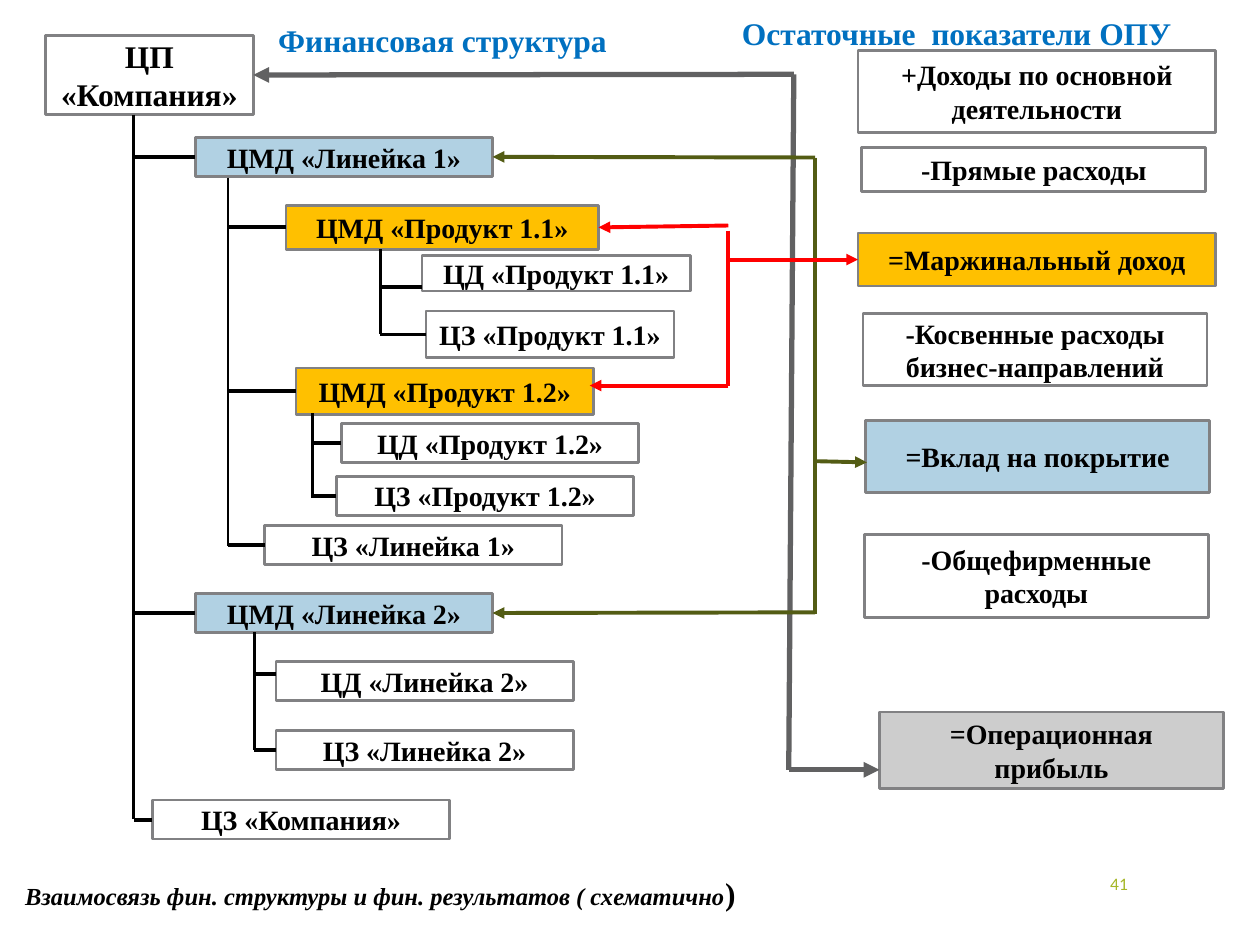
from dataclasses import dataclass

from lxml import etree
from pptx import Presentation
from pptx.dml.color import RGBColor
from pptx.enum import shapes, text
from pptx.oxml import ns
from pptx.util import Inches, Pt


@dataclass(frozen=True)
class Theme:
    serif: str = "Times New Roman"
    sans: str = "Calibri"
    black: str = "000000"
    white: str = "FFFFFF"
    edge: str = "818183"
    blue: str = "B1D1E3"
    gold: str = "FFC000"
    gray: str = "CDCDCD"
    title: str = "0070C0"
    page: str = "A6B727"
    red: str = "FF0000"
    olive: str = "535C14"
    dark: str = "616162"
    head: int = 18
    body: int = 16
    note: int = 14
    small: int = 10
    thin: float = 1.5
    mid: float = 2.25
    thick: float = 3


T = Theme()
deck = Presentation()
deck.slide_width, deck.slide_height = Inches(10), Inches(7.5)
slide = deck.slides.add_slide(deck.slide_layouts[6])


def style(font, size, color=T.black, bold=True, name=T.serif):
    font.name, font.size, font.bold = name, Pt(size), bold
    font.color.rgb = RGBColor.from_string(color)


def link(x1, y1, x2, y2, color=T.black, width=T.mid, arrow=False, goal=None, side=1):
    """Draw a straight line; goal is a box whose side the line is joined to."""
    line = slide.shapes.add_connector(
        shapes.MSO_CONNECTOR.STRAIGHT, *map(Inches, (x1, y1, x2, y2)))
    line.line.color.rgb = RGBColor.from_string(color)
    line.line.width = Pt(width)
    props = line._element.spPr
    if arrow:
        etree.SubElement(props.find(ns.qn("a:ln")), ns.qn("a:tailEnd"), type="triangle")
    etree.SubElement(props, ns.qn("a:effectLst"))
    if goal:
        line.end_connect(boxes[goal], side)


# Boxes: the tree of centres on the left, the profit figures on the right
nodes = [
    ("ЦП «Компания»", 0.36, 0.28, 1.65, 0.63, T.white),
    ("ЦМД «Линейка 1»", 1.55, 1.09, 2.36, 0.31, T.blue),
    ("ЦМД «Продукт 1.1»", 2.27, 1.63, 2.48, 0.35, T.gold),
    ("ЦД «Продукт 1.1»", 3.35, 2.03, 2.13, 0.28, None),
    ("ЦЗ «Продукт 1.1»", 3.38, 2.47, 1.97, 0.37, T.white),
    ("ЦМД «Продукт 1.2»", 2.35, 2.92, 2.36, 0.37, T.gold),
    ("ЦД «Продукт 1.2»", 2.71, 3.36, 2.36, 0.31, T.white),
    ("ЦЗ «Продукт 1.2»", 2.67, 3.78, 2.36, 0.31, T.white),
    ("ЦЗ «Линейка 1»", 2.1, 4.17, 2.36, 0.31, T.white),
    ("ЦМД «Линейка 2»", 1.55, 4.71, 2.36, 0.31, T.blue),
    ("ЦД «Линейка 2»", 2.19, 5.25, 2.36, 0.31, T.white),
    ("ЦЗ «Линейка 2»", 2.19, 5.8, 2.36, 0.31, T.white),
    ("ЦЗ «Компания»", 1.21, 6.35, 2.36, 0.31, T.white),
    ("+Доходы по основной деятельности", 6.81, 0.4, 2.84, 0.65, T.white),
    ("-Прямые расходы", 6.84, 1.17, 2.73, 0.35, T.white),
    ("=Маржинальный доход", 6.81, 1.85, 2.84, 0.42, T.gold),
    ("-Косвенные расходы бизнес-направлений", 6.85, 2.49, 2.73, 0.57, T.white),
    ("=Вклад на покрытие", 6.87, 3.34, 2.73, 0.57, T.blue),
    ("-Общефирменные расходы", 6.86, 4.24, 2.73, 0.66, T.white),
    ("=Операционная прибыль", 6.98, 5.65, 2.73, 0.61, T.gray),
]
boxes = {}
for label, x, y, w, h, fill in nodes:
    box = slide.shapes.add_shape(
        shapes.MSO_SHAPE.RECTANGLE, *map(Inches, (x, y, w, h)))
    box.shadow.inherit = False
    if fill:
        box.fill.solid()
        box.fill.fore_color.rgb = RGBColor.from_string(fill)
    else:
        box.fill.background()
    box.line.color.rgb = RGBColor.from_string(T.edge)
    box.line.width = Pt(T.thin)
    frame = box.text_frame
    frame.word_wrap = True
    frame.vertical_anchor = text.MSO_ANCHOR.MIDDLE
    para = frame.paragraphs[0]
    para.text, para.alignment = label, text.PP_ALIGN.CENTER
    style(para.font, T.head if label == "ЦП «Компания»" else T.body)
    boxes[label] = box

# Tree: each trunk (x, top, bottom) and the boxes that branch from it
trunks = [
    (1.06, 0.91, 6.5, ["ЦМД «Линейка 1»", "ЦМД «Линейка 2»", "ЦЗ «Компания»"]),
    (1.81, 1.41, 4.33, ["ЦМД «Продукт 1.1»", "ЦМД «Продукт 1.2»", "ЦЗ «Линейка 1»"]),
    (3.02, 1.98, 2.65, ["ЦЗ «Продукт 1.1»"]),
    (2.48, 3.28, 3.95, ["ЦД «Продукт 1.2»", "ЦЗ «Продукт 1.2»"]),
    (2.02, 5.02, 5.95, ["ЦЗ «Линейка 2»"]),
]
for x, top, low, kids in trunks:
    link(x, top, x, low, width=T.thin)
    for kid in kids:
        y = (boxes[kid].top + boxes[kid].height / 2) / Inches(1)
        link(x, y, x, y, goal=kid)
link(3.02, 2.28, 3.35, 2.28)
link(2.02, 5.35, 2.19, 5.35)

# Operating profit
link(6.3, 0.59, 6.26, 6.11, T.dark, T.thick)
link(6.3, 0.59, 2.01, 0.6, T.dark, T.thick, True, "ЦП «Компания»", 3)
link(6.26, 6.11, 6.98, 6.11, T.dark, T.thick, True)

# Contribution to cover
link(6.47, 1.25, 6.47, 4.87, T.olive)
link(6.47, 1.25, 3.91, 1.25, T.olive, arrow=True, goal="ЦМД «Линейка 1»", side=3)
link(6.47, 4.86, 3.91, 4.86, T.olive, arrow=True, goal="ЦМД «Линейка 2»", side=3)
link(6.46, 3.66, 6.88, 3.67, T.olive, arrow=True)

# Marginal income
link(5.78, 1.83, 5.78, 3.06, T.red)
link(5.78, 1.79, 4.75, 1.8, T.red, arrow=True, goal="ЦМД «Продукт 1.1»", side=3)
link(5.78, 3.06, 4.68, 3.06, T.red, arrow=True)
link(5.78, 2.06, 6.81, 2.06, T.red, arrow=True, goal="=Маржинальный доход")

# Headings, caption and page number
for label, x, y, w in [("Финансовая структура", 2.11, 0.12, 2.84),
                       ("Остаточные  показатели ОПУ", 5.79, 0.06, 3.65)]:
    head = slide.shapes.add_textbox(*map(Inches, (x, y, w, 0.4))).text_frame
    head.word_wrap = False
    head.paragraphs[0].text = label
    style(head.paragraphs[0].font, T.head, T.title)

note = slide.shapes.add_textbox(*map(Inches, (0.1, 6.89, 5.85, 0.4))).text_frame
note.word_wrap = True
for part, size, slant in [
        ("Взаимосвязь фин. структуры и фин. результатов ( схематично", T.note, True),
        (")", T.head, False)]:
    run = note.paragraphs[0].add_run()
    run.text = part
    style(run.font, size)
    run.font.italic = slant

page = slide.shapes.add_textbox(*map(Inches, (7.65, 6.81, 1.4, 0.4))).text_frame
page.word_wrap = True
page.vertical_anchor = text.MSO_ANCHOR.MIDDLE
para = page.paragraphs[0]
para.text, para.alignment = "41", text.PP_ALIGN.RIGHT
style(para.font, T.small, T.page, False, T.sans)

deck.save("out.pptx")
